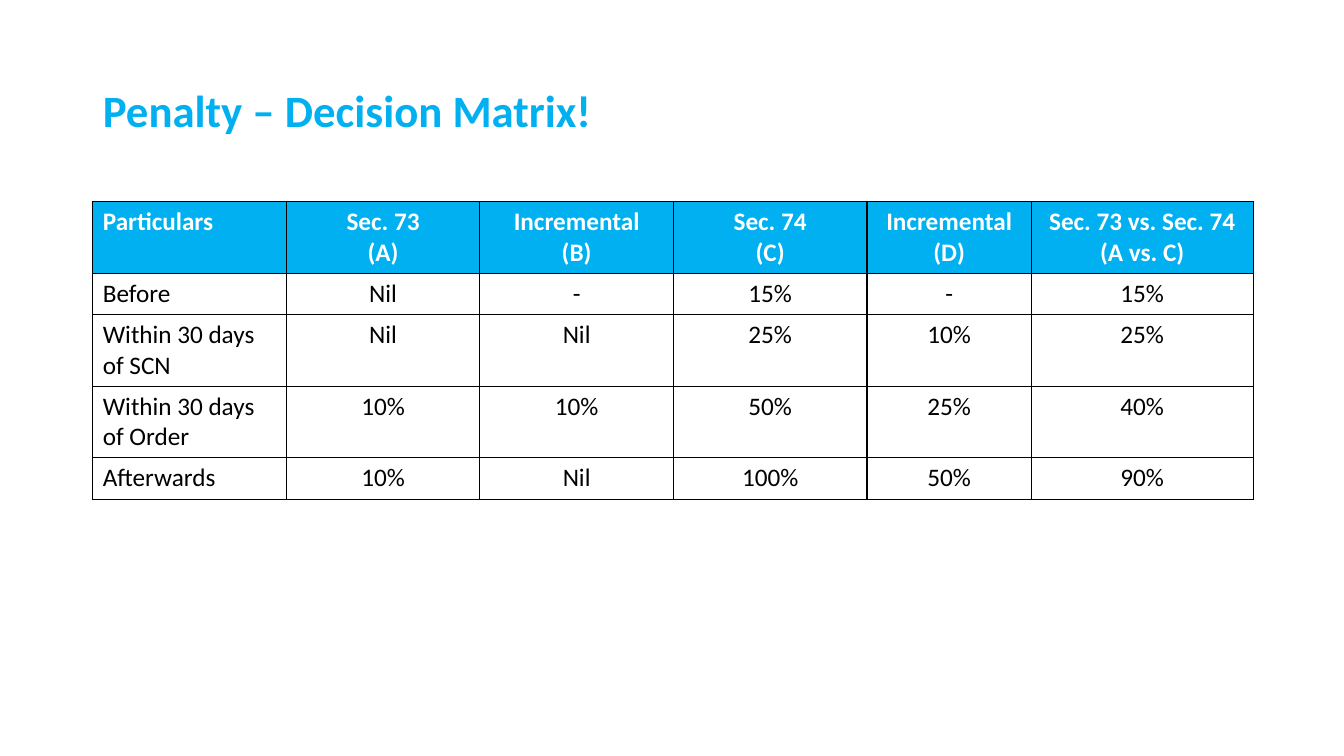
from lxml.etree import SubElement
from pptx import Presentation
from pptx.dml.color import RGBColor
from pptx.enum.text import MSO_ANCHOR as Anchor, PP_ALIGN as Align
from pptx.oxml.ns import qn
from pptx.util import Inches, Pt

TITLE = "Penalty – Decision Matrix!"
ROWS = [
    ("Particulars", "Sec. 73\n(A)", "Incremental\n(B)", "Sec. 74\n(C)",
     "Incremental\n(D)", "Sec. 73 vs. Sec. 74\n(A vs. C)"),
    ("Before", "Nil", "-", "15%", "-", "15%"),
    ("Within 30 days of SCN", "Nil", "Nil", "25%", "10%", "25%"),
    ("Within 30 days of Order", "10%", "10%", "50%", "25%", "40%"),
    ("Afterwards", "10%", "Nil", "100%", "50%", "90%"),
]
WIDTHS = [1.92, 1.92, 1.92, 1.92, 1.63, 2.2]
ROW_HEIGHT = 0.41
LEFT, TOP = 0.92, 2
BLUE, WHITE, BLACK = "00B0F0", "FFFFFF", "000000"


def style(para, size, color, bold, align):
    font = para.font
    font.name = "Calibri"
    font.size = Pt(size)
    font.bold = bold
    font.color.rgb = RGBColor.from_string(color)
    para.alignment = align


def add_borders(cell):
    props = cell._tc.get_or_add_tcPr()
    for side in ("lnL", "lnR", "lnT", "lnB"):
        line = SubElement(props, qn(f"a:{side}"), w=str(Pt(1)))
        fill = SubElement(line, qn("a:solidFill"))
        SubElement(fill, qn("a:srgbClr"), val=BLACK)


def add_title(slide):
    title = slide.shapes.title
    title.left, title.top = Inches(LEFT), Inches(0.4)
    title.width, title.height = Inches(11.5), Inches(1.45)
    frame = title.text_frame
    frame.text = TITLE
    frame.vertical_anchor = Anchor.MIDDLE
    para = frame.paragraphs[0]
    para.line_spacing = 0.9
    style(para, 32, BLUE, True, Align.LEFT)


def add_matrix(slide):
    table = slide.shapes.add_table(
        len(ROWS), len(WIDTHS), Inches(LEFT), Inches(TOP),
        Inches(sum(WIDTHS)), Inches(ROW_HEIGHT * len(ROWS))).table
    table.horz_banding = False
    for column, width in zip(table.columns, WIDTHS):
        column.width = Inches(width)
    for r, texts in enumerate(ROWS):
        head = r == 0
        for c, text in enumerate(texts):
            cell = table.cell(r, c)
            cell.text = text
            add_borders(cell)
            if head:
                cell.fill.solid()
                cell.fill.fore_color.rgb = RGBColor.from_string(BLUE)
            else:
                cell.fill.background()
            for para in cell.text_frame.paragraphs:
                style(para, 18, WHITE if head else BLACK, head,
                      Align.CENTER if c else Align.LEFT)


def main():
    deck = Presentation()
    deck.slide_width, deck.slide_height = Inches(13.33), Inches(7.5)
    slide = deck.slides.add_slide(deck.slide_layouts[5])
    add_title(slide)
    add_matrix(slide)
    deck.save("out.pptx")


if __name__ == "__main__":
    main()
